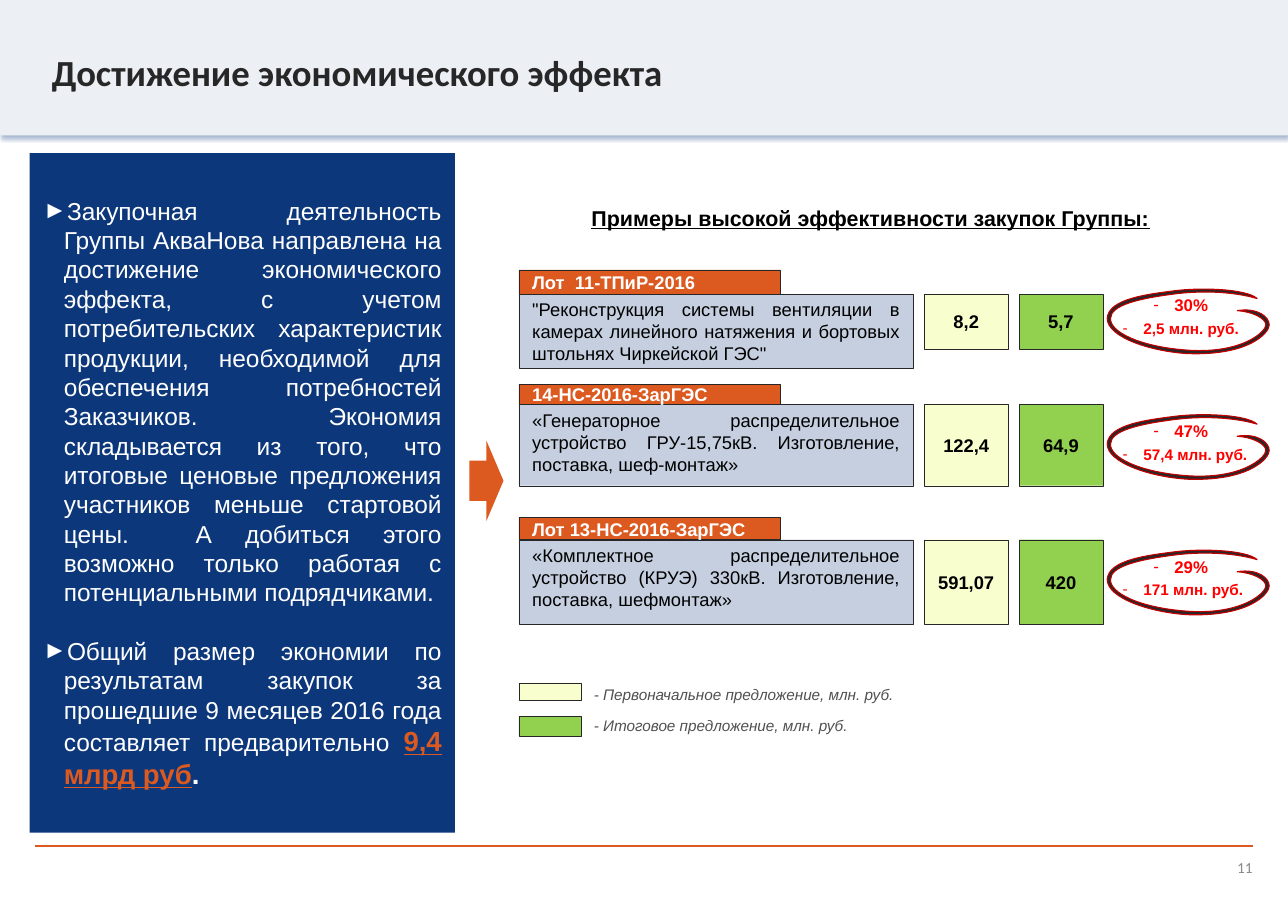
from lxml import etree
from pptx import Presentation
from pptx.dml.color import RGBColor as RGB
from pptx.enum.shapes import MSO_CONNECTOR, MSO_SHAPE as SHAPE
from pptx.enum.text import MSO_ANCHOR as ANCHOR, MSO_AUTO_SIZE as AUTO, PP_ALIGN as ALIGN
from pptx.oxml import parse_xml
from pptx.oxml.ns import nsdecls, qn
from pptx.util import Pt

PX = 9144  # 100 px to the inch

THEME = {
    "navy": "0C377B", "orange": "DC5A20", "header": "ECEFF4", "ink": "272727",
    "body": "C5CFDF", "initial": "F9FECE", "final": "92D050", "red": "FF0000",
    "ring": "C00000", "legend": "505150", "number": "898989",
    "white": "FFFFFF", "black": "000000",
    "title_size": 24, "total_size": 18, "panel_size": 16, "heading_size": 14,
    "lot_size": 12, "percent_size": 11, "small_size": 10,
}


def box(left, top, width, height, fill=None, outlined=False, preset=SHAPE.RECTANGLE):
    """A filled shape, or a text box when there is no fill."""
    place = [n * PX for n in (left, top, width, height)]
    if fill is None:
        return slide.shapes.add_textbox(*place)
    part = slide.shapes.add_shape(preset, *place)
    part.shadow.inherit = False
    part.fill.solid()
    part.fill.fore_color.rgb = RGB.from_string(THEME[fill])
    if outlined:
        part.line.color.rgb = RGB.from_string(THEME["ink"])
        part.line.width = Pt(0.25)
    else:
        part.line.fill.background()
    return part


def write(part, text, size, color, align=ALIGN.LEFT, anchor=ANCHOR.TOP, bold=False,
          font="Arial", insets=(12, 4, 12, 4), wrap=True, bullet=None):
    frame = part.text_frame
    frame.text = text
    frame.word_wrap = wrap
    frame.auto_size = AUTO.NONE
    frame.vertical_anchor = anchor
    (frame.margin_left, frame.margin_top,
     frame.margin_right, frame.margin_bottom) = [n * PX for n in insets]
    for paragraph in frame.paragraphs:
        paragraph.alignment = align
        if bullet:
            props = paragraph._p.get_or_add_pPr()
            props.set("marL", str(19 * PX))
            props.set("indent", str(-19 * PX))
            etree.SubElement(props, qn("a:buFont")).set("typeface", "Arial")
            etree.SubElement(props, qn("a:buChar")).set("char", bullet)
        for run in paragraph.runs:
            run.font.name, run.font.size, run.font.bold = font, Pt(THEME[size]), bold
            run.font.color.rgb = RGB.from_string(THEME[color])
    return frame


prs = Presentation()
prs.slide_width, prs.slide_height = 1169 * PX, 827 * PX
slide = prs.slides.add_slide(prs.slide_layouts[5])

# Header band with a soft shadow, behind the title
header = box(0, 0, 1169, 123, "header")
header._element.spPr.remove(header._element.spPr.find(qn("a:effectLst")))
header._element.spPr.append(parse_xml(
    f'<a:effectLst {nsdecls("a")}><a:outerShdw blurRad="{Pt(3.1)}" dist="{Pt(1.8)}" '
    f'dir="5400000" rotWithShape="0"><a:srgbClr val="{THEME["navy"]}">'
    '<a:alpha val="35000"/></a:srgbClr></a:outerShdw></a:effectLst>'))
slide.shapes._spTree.insert(2, header._element)

# Title
title = slide.shapes.title
title.left, title.top, title.width, title.height = [n * PX for n in (47, 41, 1075, 81)]
write(title, "Достижение экономического эффекта", "title_size", "ink",
      bold=True, font="Calibri", insets=(0, 4, 0, 0))

# Footer rule and page number
rule = slide.shapes.add_connector(MSO_CONNECTOR.STRAIGHT,
                                  32 * PX, 768 * PX, 1137 * PX, 768 * PX)
rule.line.color.rgb = RGB.from_string(THEME["orange"])
rule.line.width = Pt(1.5)
etree.SubElement(rule._element.spPr, qn("a:effectLst"))
write(box(864, 779, 273, 17), "11", "small_size", "number", ALIGN.RIGHT,
      ANCHOR.MIDDLE, font="Calibri", insets=(0, 0, 0, 0))

# Summary panel and the arrow to the examples
box(426, 400, 31, 73, "orange", preset=SHAPE.RIGHT_ARROW)
summary = write(
    box(27, 139, 386, 617, "navy"),
    "Закупочная деятельность Группы АкваНова направлена на достижение экономического "
    "эффекта, с учетом потребительских характеристик продукции, необходимой для "
    "обеспечения потребностей Заказчиков. Экономия складывается из того, что итоговые "
    "ценовые предложения участников меньше стартовой цены.  А добиться этого возможно "
    "только работая с потенциальными подрядчиками.\n"
    "Общий размер экономии по результатам закупок за прошедшие 9 месяцев 2016 года "
    "составляет предварительно ",
    "panel_size", "white", ALIGN.JUSTIFY, ANCHOR.MIDDLE, bullet="►")
total = summary.paragraphs[1]
total.space_before = Pt(19)
for text, color, underline in (("9,4 млрд руб", "orange", True), (".", "white", False)):
    run = total.add_run()
    run.text = text
    run.font.name, run.font.size, run.font.bold = "Arial", Pt(THEME["total_size"]), True
    run.font.underline = underline
    run.font.color.rgb = RGB.from_string(THEME[color])

# Heading of the examples
heading = write(box(527, 181, 560, 34), "Примеры высокой эффективности закупок Группы:",
                "heading_size", "black", bold=True, insets=(10, 5, 10, 5))
heading.paragraphs[0].runs[0].font.underline = True

# Hand-drawn ring: a start point, then three points for each cubic curve
ring_start = (136, 10)
ring_points = [
    (112, 3), (82, 3), (60, 6), (29, 10), (3, 16), (3, 28),
    (2, 40), (29, 54), (74, 57), (123, 60), (144, 40), (144, 34),
    (144, 28), (132, 22), (118, 21), (137, 18), (147, 27), (147, 34),
    (147, 41), (129, 62), (73, 60), (39, 58), (0, 45), (0, 28),
    (1, 10), (38, 6), (61, 3), (84, 0), (126, 1), (136, 10),
]

# Lots: name, subject, offers, saving; then tops and heights of the row's parts
lots = [
    ("Лот  11-ТПиР-2016",
     "\"Реконструкция системы вентиляции в камерах линейного натяжения и бортовых "
     "штольнях Чиркейской ГЭС\"",
     "8,2", "5,7", "30%", "2,5 млн. руб.", 245, 267, 67, 50, 261),
    ("14-НС-2016-ЗарГЭС",
     "«Генераторное распределительное устройство ГРУ-15,75кВ. Изготовление, поставка, "
     "шеф-монтаж»",
     "122,4", "64,9", "47%", "57,4 млн. руб.", 349, 367, 74, 74, 375),
    ("Лот 13-НС-2016-ЗарГЭС",
     "«Комплектное распределительное устройство (КРУЭ) 330кВ. Изготовление, поставка, "
     "шефмонтаж»",
     "591,07", "420", "29%", "171 млн. руб.", 470, 490, 77, 77, 498),
]
for (lot, subject, initial, final, percent, saving,
     lot_top, top, subject_height, offer_height, ring_top) in lots:
    write(box(471, top, 358, subject_height, "body", True), subject,
          "lot_size", "black", ALIGN.JUSTIFY)
    write(box(471, lot_top, 237, top - lot_top, "orange", True), lot,
          "lot_size", "white", anchor=ANCHOR.MIDDLE, bold=True)
    for left, offer, fill in ((839, initial, "initial"), (925, final, "final")):
        write(box(left, top, 76, offer_height, fill, True), offer,
              "lot_size", "black", ALIGN.CENTER, ANCHOR.MIDDLE, bold=True)

    outline = slide.shapes.build_freeform(*ring_start, scale=PX)
    outline.add_line_segments(ring_points, close=True)
    ring = outline.convert_to_shape(1005 * PX, ring_top * PX)
    ring.shadow.inherit = False
    ring.fill.solid()
    ring.fill.fore_color.rgb = RGB.from_string(THEME["ink"])
    ring.line.color.rgb = RGB.from_string(THEME["ring"])
    ring.line.width = Pt(0.75)
    # Join every three line segments into one cubic curve
    segments = list(ring._element.iter(qn("a:lnTo")))
    for first in range(0, len(ring_points), 3):
        curve = etree.Element(qn("a:cubicBezTo"))
        segments[first].addprevious(curve)
        for segment in segments[first:first + 3]:
            curve.append(segment[0])
            segment.getparent().remove(segment)

    for left, drop, width, text, size in ((1037, 2, 70, percent, "percent_size"),
                                          (1009, 24, 130, saving, "small_size")):
        write(box(left, ring_top + drop, width, 28), text, size, "red", bold=True,
              insets=(10, 5, 10, 5), wrap=False, bullet="-")

# Legend
for top, height, label_top, fill, label in (
        (620, 16, 622, "initial", "- Первоначальное предложение, млн. руб."),
        (650, 18, 650, "final", "- Итоговое предложение, млн. руб.")):
    box(471, top, 57, height, fill, True)
    note = write(box(531, label_top, 318, 17), label, "small_size", "legend",
                 insets=(8, 0, 0, 0))
    note.paragraphs[0].runs[0].font.italic = True

prs.save("out.pptx")
